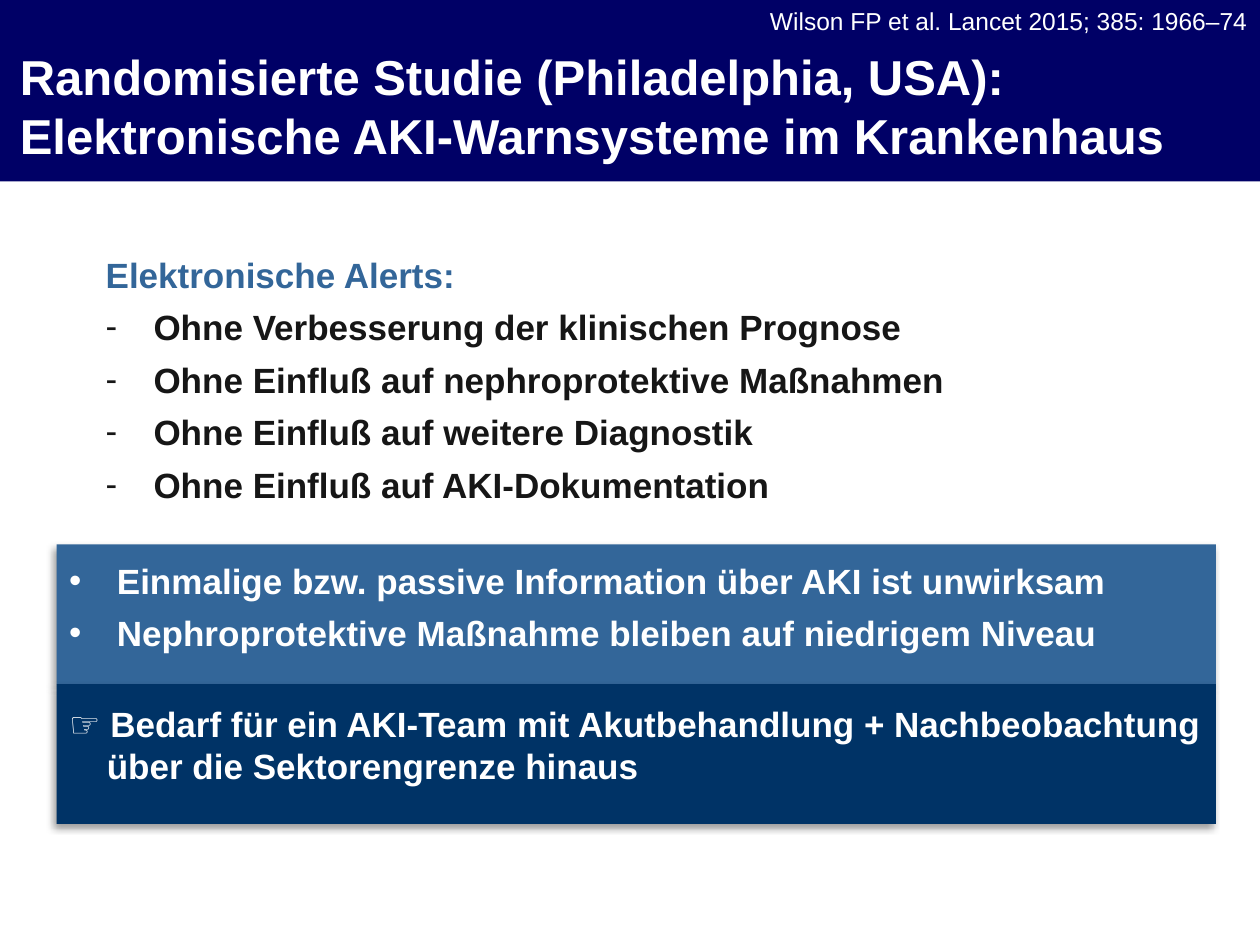
from lxml.etree import SubElement
from pptx import Presentation
from pptx.dml.color import RGBColor
from pptx.enum.shapes import MSO_SHAPE as Shape
from pptx.enum.text import MSO_AUTO_SIZE as AutoSize, PP_ALIGN as Align
from pptx.oxml.ns import qn
from pptx.util import Inches, Pt

COLORS = {
    "navy": "000066",
    "blue": "336699",
    "deep": "003366",
    "white": "FFFFFF",
    "ink": "161616",
    "black": "000000",
}


def rgb(name):
    return RGBColor.from_string(COLORS[name])


def write(tf, text, size=20, color="white", bold=True, align=None,
          bullet=None, indent=0, before=0, after=0):
    p = tf.paragraphs[0]
    if p.runs:
        p = tf.add_paragraph()
    p.text = text
    if align is not None:
        p.alignment = align
    if before:
        p.space_before = Pt(before)
    if after:
        p.space_after = Pt(after)
    pPr = p._p.get_or_add_pPr()
    if indent:
        pPr.set("marL", str(Inches(indent)))
        pPr.set("indent", str(-Inches(indent)))
    if bullet:
        SubElement(pPr, qn("a:buFont")).set("typeface", SlideBuilder.font)
        SubElement(pPr, qn("a:buChar")).set("char", bullet)
    for r in p.runs:
        r.font.name = SlideBuilder.font
        r.font.size = Pt(size)
        r.font.bold = bold
        r.font.color.rgb = rgb(color)


class SlideBuilder:
    font = "Arial"

    def __init__(self, prs):
        self.s = prs.slides.add_slide(prs.slide_layouts[6])

    def group(self):
        return self.s.shapes.add_group_shape().shapes

    def rect(self, x, y, w, h, fill, shadow=False, parent=None):
        sp = (parent or self.s.shapes).add_shape(
            Shape.RECTANGLE, Inches(x), Inches(y), Inches(w), Inches(h))
        sp.fill.solid()
        sp.fill.fore_color.rgb = rgb(fill)
        sp.line.fill.background()
        sp.shadow.inherit = False
        if shadow:
            self.add_shadow(sp)
        return sp

    def add_shadow(self, sp):
        effects = sp._element.spPr.find(qn("a:effectLst"))
        outer = SubElement(effects, qn("a:outerShdw"), blurRad=str(Pt(4)),
                           dist=str(Pt(3)), dir=str(135 * 60000),
                           algn="tr", rotWithShape="0")
        clr = SubElement(outer, qn("a:srgbClr"), val=COLORS["black"])
        SubElement(clr, qn("a:alpha"), val="40000")

    def text(self, x, y, w, h, wrap=True, parent=None):
        sp = (parent or self.s.shapes).add_textbox(
            Inches(x), Inches(y), Inches(w), Inches(h))
        tf = sp.text_frame
        tf.word_wrap = wrap
        tf.auto_size = AutoSize.SHAPE_TO_FIT_TEXT
        return tf


def main():
    prs = Presentation()
    prs.slide_width, prs.slide_height = Inches(10), Inches(7.5)
    b = SlideBuilder(prs)

    b.rect(0, 0, 10, 1.44, "navy")
    write(b.text(0.06, 0.32, 10, 1.04),
          "Randomisierte Studie (Philadelphia, USA):\n"
          "Elektronische AKI-Warnsysteme im Krankenhaus", size=28)
    write(b.text(4.94, 0, 5.06, 0.34),
          "Wilson FP et al. Lancet 2015; 385: 1966–74",
          size=14, bold=False, align=Align.RIGHT)

    tf = b.text(0.74, 1.96, 6.91, 2.12, wrap=False)
    write(tf, "Elektronische Alerts:", color="blue", after=6)
    for finding in (
        "Ohne Verbesserung der klinischen Prognose",
        "Ohne Einfluß auf nephroprotektive Maßnahmen",
        "Ohne Einfluß auf weitere Diagnostik",
        "Ohne Einfluß auf AKI-Dokumentation",
    ):
        write(tf, finding, color="ink", bullet="-", indent=0.38, after=6)

    conclusion = b.group()
    panel_h = 1.11
    for i, fill in enumerate(("blue", "deep")):
        b.rect(0.45, 4.32 + i * panel_h, 9.2, panel_h, fill,
               shadow=True, parent=conclusion)
    tf = b.text(0.45, 4.39, 9.33, 1.94, parent=conclusion)
    for point in (
        "Einmalige bzw. passive Information über AKI ist unwirksam",
        "Nephroprotektive Maßnahme bleiben auf niedrigem Niveau",
    ):
        write(tf, point, bullet="•", indent=0.38, after=6)
    write(tf, "☞ Bedarf für ein AKI-Team mit Akutbehandlung + Nachbeobachtung "
              "über die Sektorengrenze hinaus",
          indent=0.3, before=22, after=6)

    prs.save("out.pptx")


if __name__ == "__main__":
    main()
